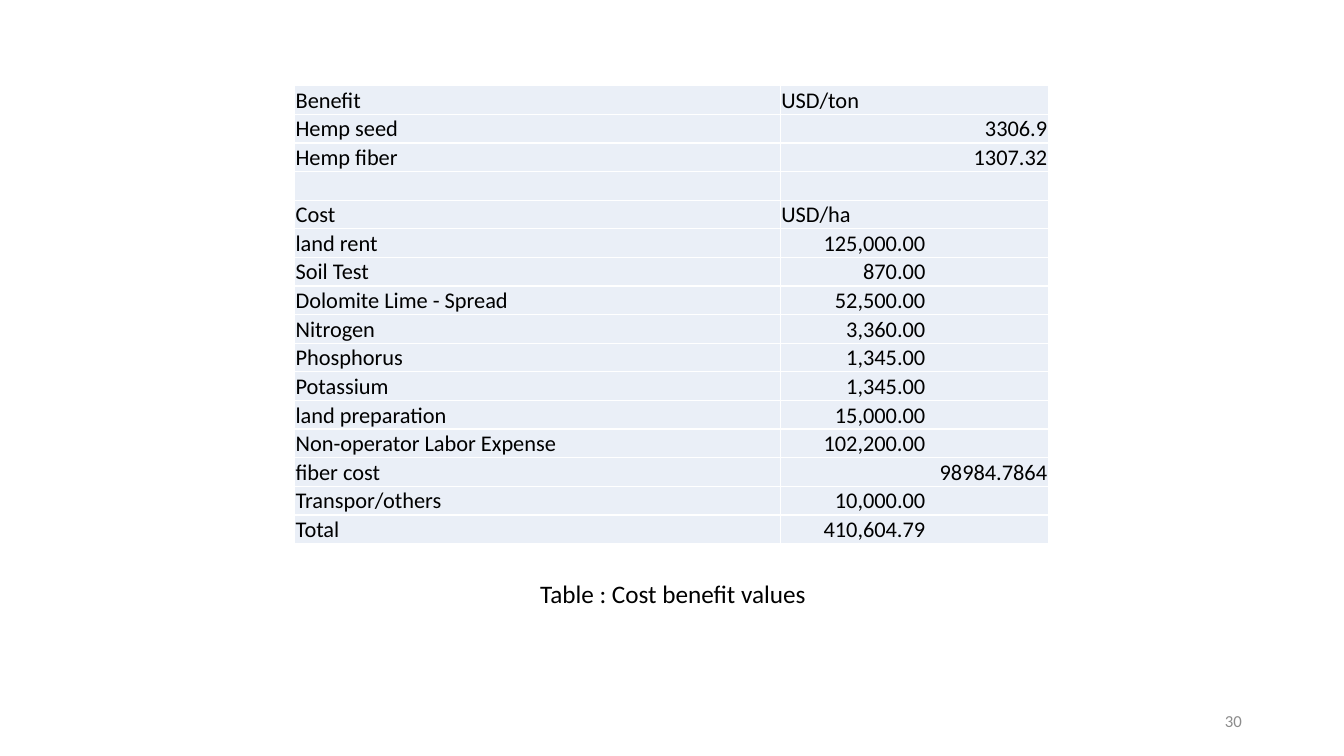
from dataclasses import dataclass

from lxml import etree
from pptx import Presentation
from pptx.dml.color import RGBColor
from pptx.enum.text import MSO_ANCHOR, PP_ALIGN
from pptx.oxml.ns import qn
from pptx.slide import Slide
from pptx.table import _Cell
from pptx.util import Cm, Pt

LEFT, RIGHT = PP_ALIGN.LEFT, PP_ALIGN.RIGHT
TOP, MIDDLE, BOTTOM = MSO_ANCHOR.TOP, MSO_ANCHOR.MIDDLE, MSO_ANCHOR.BOTTOM


@dataclass(frozen=True)
class Theme:
    font: str = "Calibri"
    ink: str = "000000"
    grey: str = "8C8C8C"
    fill: str = "EAEFF7"
    rule: str = "FFFFFF"
    cell: int = 16
    note: int = 18
    page: int = 12


@dataclass(frozen=True)
class Item:
    label: str = ""
    value: str = ""
    align: PP_ALIGN = RIGHT
    inset: float = 0.03


@dataclass(frozen=True)
class Label:
    text: str
    left: float
    top: float
    width: float
    size: int
    color: str
    align: PP_ALIGN
    anchor: MSO_ANCHOR


THEME = Theme()
EDGE = 0.03
SUM_INSET = 3.1  # sums line up well inside the value column
COLS = (12.24, 6.76)
ROW = 0.71

ITEMS = (
    Item("Benefit", "USD/ton", LEFT),
    Item("Hemp seed", "3306.9"),
    Item("Hemp fiber", "1307.32"),
    Item(),
    Item("Cost", "USD/ha", LEFT),
    Item("land rent", "125,000.00", inset=SUM_INSET),
    Item("Soil Test", "870.00", inset=SUM_INSET),
    Item("Dolomite Lime - Spread", "52,500.00", inset=SUM_INSET),
    Item("Nitrogen", "3,360.00", inset=SUM_INSET),
    Item("Phosphorus", "1,345.00", inset=SUM_INSET),
    Item("Potassium", "1,345.00", inset=SUM_INSET),
    Item("land preparation", "15,000.00", inset=SUM_INSET),
    Item("Non-operator Labor Expense", "102,200.00", inset=SUM_INSET),
    Item("fiber cost", "98984.7864"),
    Item("Transpor/others", "10,000.00", inset=SUM_INSET),
    Item("Total", "410,604.79", inset=SUM_INSET),
)

LABELS = (
    Label("30", 23.93, 17.65, 7.62, THEME.page, THEME.grey, RIGHT, MIDDLE),
    Label("Table : Cost benefit values", 13.36, 14.45, 10.16,
          THEME.note, THEME.ink, LEFT, TOP),
)


def assign(target: object, values: dict) -> None:
    for name, value in values.items():
        setattr(target, name, value)


def write(frame, text: str, size: int, color: str, align: PP_ALIGN) -> None:
    para = frame.paragraphs[0]
    para.alignment = align
    if not text:
        # Keeps an empty row as low as the others
        etree.SubElement(para._p, qn("a:endParaRPr"), sz=str(size * 100))
        return
    run = para.add_run()
    run.text = text
    assign(run.font, {"name": THEME.font, "size": Pt(size)})
    run.font.color.rgb = RGBColor.from_string(color)


def border(cell: _Cell) -> None:
    props = cell._tc.get_or_add_tcPr()
    for side in ("lnL", "lnR", "lnT", "lnB"):
        line = etree.SubElement(props, qn(f"a:{side}"), w=str(Pt(1)))
        fill = etree.SubElement(line, qn("a:solidFill"))
        etree.SubElement(fill, qn("a:srgbClr"), val=THEME.rule)


def fill_cell(cell: _Cell, text: str, align: PP_ALIGN, inset: float) -> None:
    assign(cell, {
        "margin_left": Cm(EDGE), "margin_right": Cm(inset),
        "margin_top": Cm(EDGE), "margin_bottom": 0,
        "vertical_anchor": BOTTOM,
    })
    border(cell)
    cell.fill.solid()
    cell.fill.fore_color.rgb = RGBColor.from_string(THEME.fill)
    write(cell.text_frame, text, THEME.cell, THEME.ink, align)


def add_costs(slide: Slide) -> None:
    table = slide.shapes.add_table(
        len(ITEMS), len(COLS), Cm(7.42), Cm(2.16),
        Cm(sum(COLS)), Cm(ROW * len(ITEMS))).table
    assign(table, {"first_row": False, "horz_banding": False})
    for col, width in zip(table.columns, COLS):
        col.width = Cm(width)
    for row, item in zip(table.rows, ITEMS):
        row.height = Cm(ROW)
        fill_cell(row.cells[0], item.label, LEFT, EDGE)
        fill_cell(row.cells[1], item.value, item.align, item.inset)


def add_label(slide: Slide, label: Label) -> None:
    frame = slide.shapes.add_textbox(
        Cm(label.left), Cm(label.top), Cm(label.width), Cm(1.02)).text_frame
    assign(frame, {"word_wrap": True, "vertical_anchor": label.anchor})
    write(frame, label.text, label.size, label.color, label.align)


def main() -> None:
    deck = Presentation()
    assign(deck, {"slide_width": Cm(33.87), "slide_height": Cm(19.05)})
    slide = deck.slides.add_slide(deck.slide_layouts[6])
    add_costs(slide)
    for label in LABELS:
        add_label(slide, label)
    deck.save("out.pptx")


if __name__ == "__main__":
    main()
